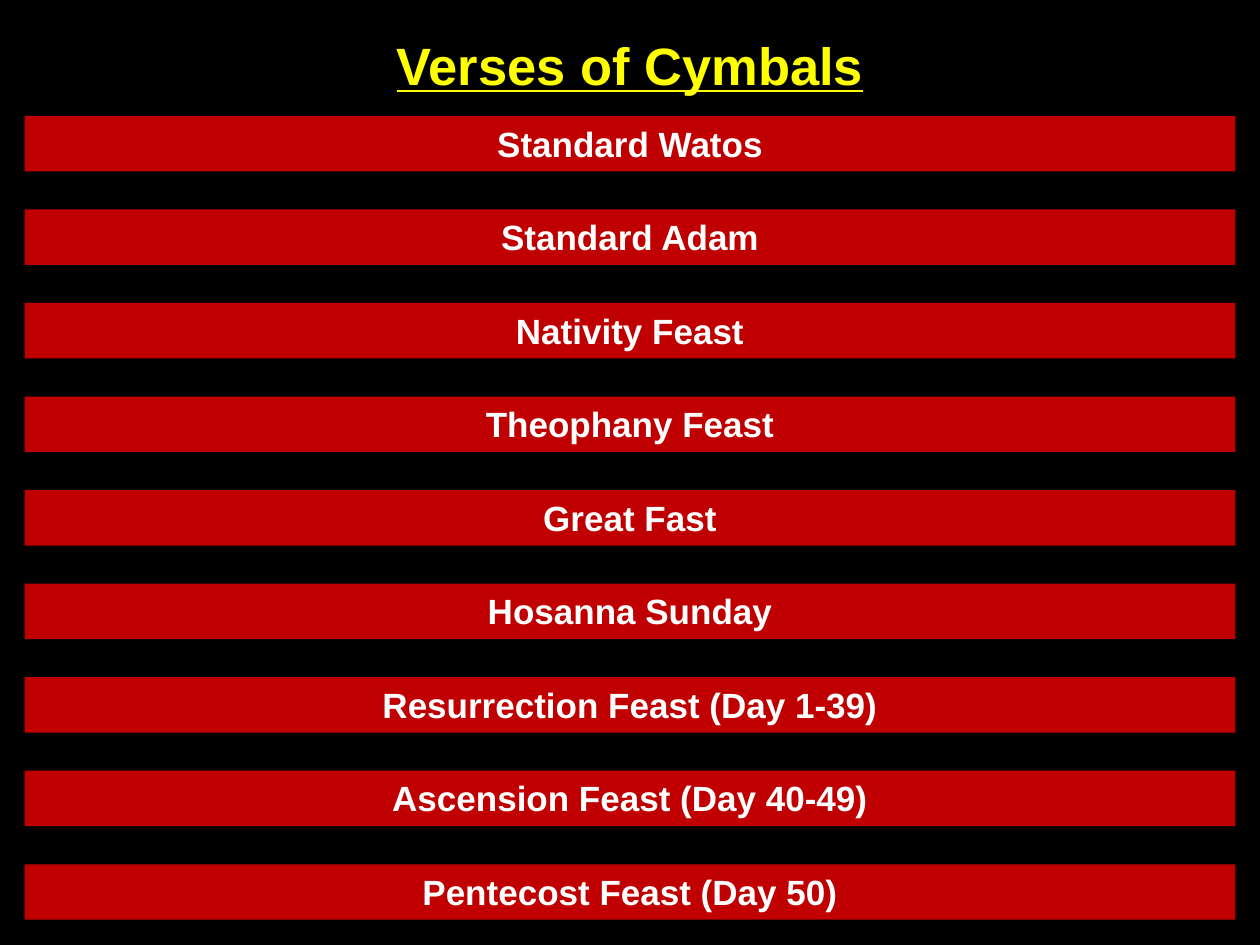
"""Build the Verses of Cymbals menu slide: a title above nine evenly spaced bars."""
from pptx import Presentation
from pptx.dml.color import RGBColor
from pptx.enum.shapes import MSO_SHAPE as SHAPE
from pptx.enum.text import MSO_ANCHOR as ANCHOR, MSO_AUTO_SIZE as AUTO, PP_ALIGN as ALIGN
from pptx.util import Inches, Pt


def paint(fill, color):
    fill.solid()
    fill.fore_color.rgb = RGBColor.from_string(color)


def write(sp, text, size, color, underline=None):
    tf = sp.text_frame
    tf.text = text
    tf.vertical_anchor = ANCHOR.TOP
    p = tf.paragraphs[0]
    p.alignment = ALIGN.CENTER
    font = p.runs[0].font
    font.name, font.size, font.bold, font.underline = "Arial", Pt(size), True, underline
    font.color.rgb = RGBColor.from_string(color)
    return tf


FEASTS = [
    "Standard Watos",
    "Standard Adam",
    "Nativity Feast",
    "Theophany Feast",
    "Great Fast",
    "Hosanna Sunday",
    "Resurrection Feast (Day 1-39)",
    "Ascension Feast (Day 40-49)",
    "Pentecost Feast (Day 50)",
]

prs = Presentation()
prs.slide_width, prs.slide_height = Inches(10), Inches(7.5)
s = prs.slides.add_slide(prs.slide_layouts[5])
paint(s.background.fill, "000000")

title = s.shapes.title
title_width = Inches(3.94)
title.left, title.top = (prs.slide_width - title_width) // 2, Inches(0.21)
title.width, title.height = title_width, Inches(0.61)
tf = write(title, "Verses of Cymbals", 30, "FFFF00", underline=True)
tf.word_wrap = False
tf.auto_size = AUTO.SHAPE_TO_FIT_TEXT

bar_width, bar_height = Inches(9.61), Inches(0.44)
bar_left = (prs.slide_width - bar_width) // 2
first_top, last_top = Inches(0.92), Inches(6.86)
pitch = (last_top - first_top) // (len(FEASTS) - 1)

for row, feast in enumerate(FEASTS):
    bar = s.shapes.add_shape(SHAPE.RECTANGLE, bar_left, first_top + row * pitch, bar_width, bar_height)
    bar.shadow.inherit = False
    paint(bar.fill, "C00000")
    bar.line.fill.background()
    tf = write(bar, feast, 20, "FFFFFF")
    tf.word_wrap = True
    tf.auto_size = AUTO.SHAPE_TO_FIT_TEXT

prs.save("out.pptx")
